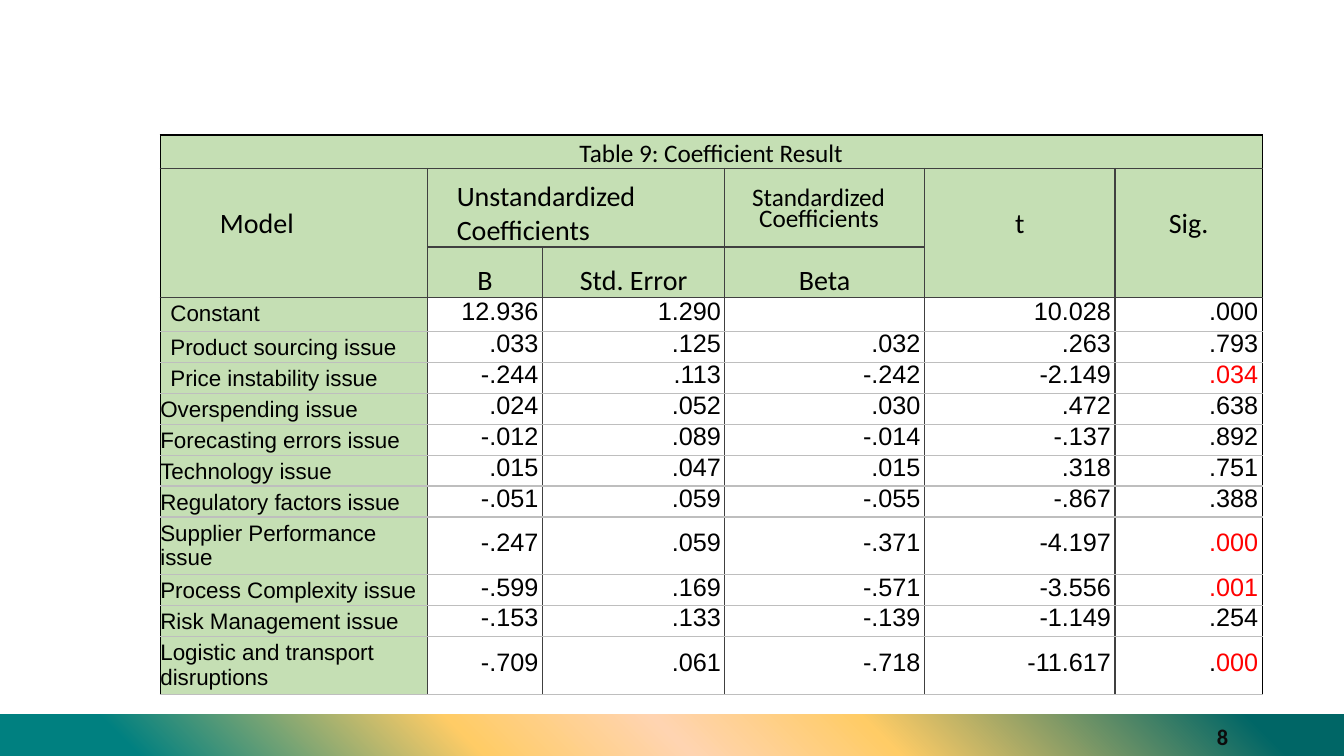
from lxml.etree import SubElement
from pptx import Presentation
from pptx.dml.color import RGBColor
from pptx.enum.shapes import MSO_SHAPE as Shape
from pptx.enum.text import MSO_ANCHOR as Anchor, PP_ALIGN as Align
from pptx.oxml import parse_xml
from pptx.oxml.ns import nsdecls, qn
from pptx.util import Inches, Pt

WIDTH, HEIGHT = Inches(13.33), Inches(7.5)
COLORS = {
    "green": "C5DFB4", "black": "000000", "red": "FF0000", "number": "0C0C0C",
    "dark": "404040", "light": "BEBEBE",
    "teal": "008080", "deep": "006666", "orange": "FFCC66", "peach": "FFD4B1",
}
BAND_STOPS = [(0, "teal"), (10, "teal"), (35, "orange"), (50, "peach"),
              (65, "orange"), (93, "deep"), (100, "deep")]

COLUMN_SHARES = [19.88, 8.55, 13.58, 14.85, 14.18, 10.95]
HEADER_SHARES = [4.4, 10.4, 6.67]
FIRST_SHARE, LINE_SHARE, DOUBLE_SHARE = 4.5, 4.05, 7.53
TWO_LINE_ISSUES = {"Supplier Performance issue", "Logistic and transport disruptions"}

COEFFICIENTS = [
    ("Constant", "12.936", "1.290", "", "10.028", ".000"),
    ("Product sourcing issue", ".033", ".125", ".032", ".263", ".793"),
    ("Price instability issue", "-.244", ".113", "-.242", "-2.149", "|.034"),
    ("Overspending issue", ".024", ".052", ".030", ".472", ".638"),
    ("Forecasting errors issue", "-.012", ".089", "-.014", "-.137", ".892"),
    ("Technology issue", ".015", ".047", ".015", ".318", ".751"),
    ("Regulatory factors issue", "-.051", ".059", "-.055", "-.867", ".388"),
    ("Supplier Performance issue", "-.247", ".059", "-.371", "-4.197", "|.000"),
    ("Process Complexity issue", "-.599", ".169", "-.571", "-3.556", "|.001"),
    ("Risk Management issue", "-.153", ".133", "-.139", "-1.149", ".254"),
    ("Logistic and transport disruptions", "-.709", ".061", "-.718", "-11.617", ".|000"),
]

HEADING = {"name": "Calibri", "size": Pt(20)}
SMALL_HEADING = {"name": "Calibri", "size": Pt(18)}
ISSUE = {"name": "Arial", "size": Pt(16)}
VALUE = {"name": "Arial", "size": Pt(18)}
CENTERED = {"alignment": Align.CENTER}
SUBHEADING = {"alignment": Align.CENTER, "line_spacing": 1.5}
VALUE_LINE = {"alignment": Align.RIGHT, "line_spacing": Pt(16)}
TALL = {"margin_top": Inches(0.38)}

HEADERS = [
    (0, 0, 1, 6, "Table 9: Coefficient Result", SMALL_HEADING, CENTERED,
     {"margin_top": Inches(0.03)}, (0, 0)),
    (1, 0, 2, 1, "Model", HEADING, {}, TALL, (0.59, 0)),
    (1, 1, 1, 2, "Unstandardized Coefficients", HEADING, {},
     {"margin_top": Inches(0.11)}, (0.29, 0)),
    (1, 3, 1, 1, "Standardized Coefficients", SMALL_HEADING, {"line_spacing": 0.67},
     {"margin_top": Inches(0.22)}, (0.34, -0.07)),
    (1, 4, 2, 1, "t", HEADING, CENTERED, TALL, (0, 0)),
    (1, 5, 2, 1, "Sig.", HEADING, CENTERED, TALL, (0, 0)),
    (2, 1, 1, 1, "B", HEADING, SUBHEADING, {}, (0, 0)),
    (2, 2, 1, 1, "Std. Error", HEADING, SUBHEADING, {}, (0, 0)),
    (2, 3, 1, 1, "Beta", HEADING, SUBHEADING, {}, (0, 0)),
]


def across(share):
    return round(WIDTH * share / 100)


def down(share):
    return round(HEIGHT * share / 100)


def rgb(color):
    return RGBColor.from_string(COLORS[color])


def apply(target, values):
    for attribute, value in values.items():
        setattr(target, attribute, value)


def add_run(paragraph, words, font, color):
    run = paragraph.add_run()
    run.text = words
    apply(run.font, font)
    run.font.color.rgb = rgb(color)


def write_cell(cell, words, font, line, margins, indent=(0, 0)):
    sides = dict.fromkeys(("margin_left", "margin_top", "margin_right", "margin_bottom"), 0)
    apply(cell, {**sides, **margins})
    paragraph = cell.text_frame.paragraphs[0]
    properties = paragraph._p.get_or_add_pPr()
    for key, length in zip(("marL", "indent"), indent):
        properties.set(key, str(Inches(length)))
    apply(paragraph, line)
    plain, _, significant = words.partition("|")
    if plain or not significant:
        add_run(paragraph, plain, font, "black")
    if significant:
        add_run(paragraph, significant, font, "red")


def draw_borders(cell, colors):
    properties = cell._tc.get_or_add_tcPr()
    for position, (side, color) in enumerate(colors.items()):
        border = parse_xml(f'<a:{side} {nsdecls("a")} w="12700"><a:solidFill>'
                           f'<a:srgbClr val="{COLORS[color]}"/></a:solidFill></a:{side}>')
        properties.insert(position, border)


def finish_cell(cell, row, column):
    headers = len(HEADER_SHARES)
    if row < headers or column == 0:
        cell.fill.solid()
        cell.fill.fore_color.rgb = rgb("green")
    else:
        cell.fill.background()
    last = column + (cell.span_width if cell.is_merge_origin else 1)
    draw_borders(cell, {
        "lnL": "black" if column == 0 else "dark",
        "lnR": "black" if last == len(COLUMN_SHARES) else "dark",
        "lnT": "black" if row == 0 else "dark" if row <= headers else "light",
        "lnB": "dark" if row < headers else "light",
    })


def add_coefficient_table(slide):
    issue_shares = [FIRST_SHARE] + [DOUBLE_SHARE if issue in TWO_LINE_ISSUES else LINE_SHARE
                                    for issue, *_ in COEFFICIENTS[1:]]
    row_shares = HEADER_SHARES + issue_shares
    table = slide.shapes.add_table(
        len(row_shares), len(COLUMN_SHARES), across(11.93), down(17.87),
        across(sum(COLUMN_SHARES)), down(sum(row_shares))).table
    apply(table, {"first_row": False, "horz_banding": False})
    for column, share in zip(table.columns, COLUMN_SHARES):
        column.width = across(share)
    for row, share in zip(table.rows, row_shares):
        row.height = down(share)

    for row, column, tall, wide, *content in HEADERS:
        heading = table.cell(row, column)
        if tall * wide > 1:
            heading.merge(table.cell(row + tall - 1, column + wide - 1))
        write_cell(heading, *content)
    for row, (issue, *values) in enumerate(COEFFICIENTS, len(HEADER_SHARES)):
        indent = (0.1, 0) if row < len(HEADER_SHARES) + 3 else (0, 0)
        write_cell(table.cell(row, 0), issue, ISSUE, {}, {"margin_top": Inches(0.04)}, indent)
        for column, value in enumerate(values, 1):
            write_cell(table.cell(row, column), value, VALUE, VALUE_LINE,
                       {"margin_right": Inches(0.04), "vertical_anchor": Anchor.MIDDLE})
    for row in range(len(row_shares)):
        for column in range(len(COLUMN_SHARES)):
            finish_cell(table.cell(row, column), row, column)


def add_footer_band(slide):
    band = slide.shapes.add_shape(Shape.RECTANGLE, 0, down(94.5), WIDTH, down(5.5))
    band.shadow.inherit = False
    band.line.fill.background()
    band.fill.background()
    gradient = parse_xml(f'<a:gradFill {nsdecls("a")} rotWithShape="1"/>')
    stops = SubElement(gradient, qn("a:gsLst"))
    for position, color in BAND_STOPS:
        stop = SubElement(stops, qn("a:gs"), pos=str(position * 1000))
        SubElement(stop, qn("a:srgbClr"), val=COLORS[color])
    circle = SubElement(gradient, qn("a:path"), path="circle")
    SubElement(circle, qn("a:fillToRect"), t="100000", r="100000")
    properties = band._element.spPr
    properties.replace(properties.find(qn("a:noFill")), gradient)


def add_page_number(slide):
    frame = slide.shapes.add_textbox(across(69.62), down(94.8), across(22.5), down(5.33)).text_frame
    apply(frame, {"word_wrap": True, "vertical_anchor": Anchor.MIDDLE})
    paragraph = frame.paragraphs[0]
    paragraph.alignment = Align.RIGHT
    add_run(paragraph, "8", {"name": "Calibri", "size": Pt(16), "bold": True}, "number")


def main():
    deck = Presentation()
    apply(deck, {"slide_width": WIDTH, "slide_height": HEIGHT})
    slide = deck.slides.add_slide(deck.slide_layouts[6])
    add_footer_band(slide)
    add_page_number(slide)
    add_coefficient_table(slide)
    deck.save("out.pptx")


if __name__ == "__main__":
    main()
